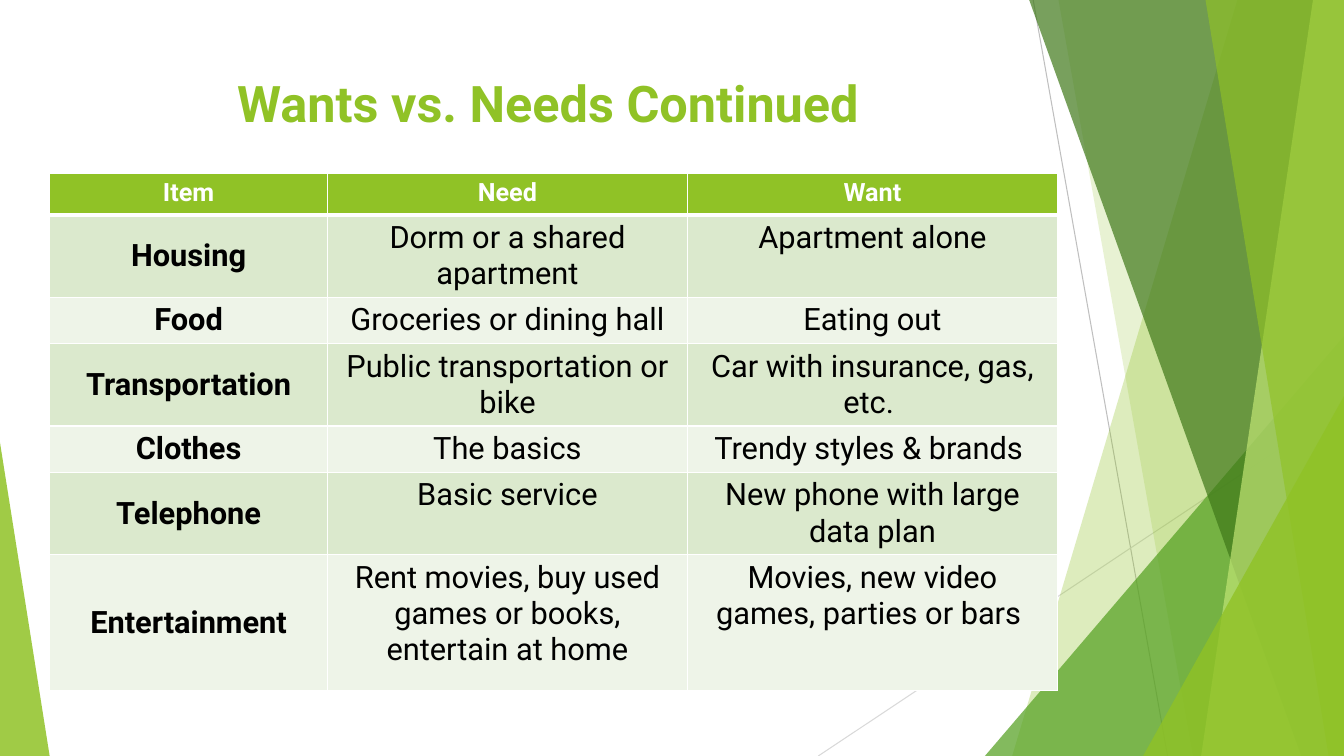
from lxml.etree import SubElement
from pptx import Presentation
from pptx.dml.color import RGBColor
from pptx.enum.shapes import MSO_CONNECTOR, MSO_SHAPE
from pptx.enum.text import MSO_ANCHOR, PP_ALIGN
from pptx.oxml.ns import qn
from pptx.util import Pt

WIDE, HIGH = 960, 540


def paint(fill, code):
    """Give a fill a solid colour."""
    fill.solid()
    fill.fore_color.rgb = RGBColor.from_string(code)


class Deck:
    font = "Roboto"
    green = "90C226"
    white = "FFFFFF"
    black = "000000"
    bands = ("DBE9CD", "EEF4E8")

    def __init__(self):
        self.prs = Presentation()
        self.prs.slide_width, self.prs.slide_height = Pt(WIDE), Pt(HIGH)
        self.slide = self.prs.slides.add_slide(self.prs.slide_layouts[5])
        self.shapes = self.slide.shapes
        paint(self.slide.background.fill, self.white)

    def label(self, frame, text, size, code, bold):
        para = frame.paragraphs[0]
        para.alignment = PP_ALIGN.CENTER
        run = para.add_run()
        run.text = text
        run.font.name, run.font.size, run.font.bold = self.font, Pt(size), bold
        paint(run.font.fill, code)

    def line(self, start, end, code):
        ends = [Pt(n) for n in start + end]
        line = self.shapes.add_connector(MSO_CONNECTOR.STRAIGHT, *ends)
        line.line.width = Pt(0.75)
        paint(line.line.fill, code)
        SubElement(line.element.spPr, qn("a:effectLst"))

    def glass(self, shape, code, alpha):
        shape.shadow.inherit = False
        shape.line.fill.background()
        paint(shape.fill, code)
        tint = shape.element.spPr.find(qn("a:solidFill"))[0]
        SubElement(tint, qn("a:alpha"), val=str(alpha * 1000))

    def pane(self, top, base, code, alpha):
        """Sheet from a slanted left edge to the right side of the slide."""
        form = self.shapes.build_freeform(Pt(top), Pt(-0.5))
        rest = [(WIDE, -0.5), (WIDE, HIGH), (base, HIGH)]
        form.add_line_segments([(Pt(x), Pt(y)) for x, y in rest])
        self.glass(form.convert_to_shape(), code, alpha)

    def wedge(self, left, top, wide, apex, code, alpha):
        """Triangle that stands on the bottom of the slide."""
        box = [Pt(n) for n in (left, top, wide, HIGH - top)]
        shape = self.shapes.add_shape(MSO_SHAPE.ISOSCELES_TRIANGLE, *box)
        shape.adjustments[0] = apex
        self.glass(shape, code, alpha)

    def title(self, text, left, top, wide, high):
        box = self.shapes.title
        box.left, box.top, box.width, box.height = map(Pt, (left, top, wide, high))
        box.text_frame.word_wrap = True
        box.text_frame.vertical_anchor = MSO_ANCHOR.TOP
        self.label(box.text_frame, text, 36, self.green, True)
        box.element.getparent().append(box.element)  # in front of the panes

    def edge(self, cell, side, width):
        props = cell._tc.get_or_add_tcPr()
        line = SubElement(props, qn("a:ln" + side), w=str(Pt(width)))
        fill = SubElement(line, qn("a:solidFill"))
        SubElement(fill, qn("a:srgbClr"), val=self.white)

    def cell(self, cell, text, row, col):
        head = row == 0
        for side in "LRTB":
            thick = (row, side) in ((0, "B"), (1, "T"))
            self.edge(cell, side, 3 if thick else 1)
        paint(cell.fill, self.green if head else self.bands[(row - 1) % 2])
        if col == 0 and not head:
            cell.vertical_anchor = MSO_ANCHOR.MIDDLE
        size, code = (18, self.white) if head else (22, self.black)
        self.label(cell.text_frame, text, size, code, head or col == 0)

    def table(self, data, left, top, cols, rows):
        box = [Pt(n) for n in (left, top, sum(cols), sum(rows))]
        grid = self.shapes.add_table(len(rows), len(cols), *box).table
        for col, wide in zip(grid.columns, cols):
            col.width = Pt(wide)
        for row, high in zip(grid.rows, rows):
            row.height = Pt(high)
        for r, texts in enumerate(data):
            for c, text in enumerate(texts):
                self.cell(grid.cell(r, c), text, r, c)


ITEMS = [
    ("Item", "Need", "Want"),
    ("Housing", "Dorm or a shared apartment", "Apartment alone"),
    ("Food", "Groceries or dining hall", "Eating out"),
    ("Transportation", "Public transportation or bike", "Car with insurance, gas, etc. "),
    ("Clothes", "The basics", "Trendy styles & brands "),
    ("Telephone", "Basic service", "New phone with large data plan"),
    ("Entertainment", "Rent movies, buy used games or books, entertain at home",
     "Movies, new video games, parties or bars "),
]


def main():
    deck = Deck()

    # Thin lines and glass panes, back to front
    deck.line((738, 0), (834, HIGH), "BFBFBF")
    deck.line((WIDE, 290), (584.5, HIGH), "D9D9D9")
    deck.pane(884, 723, deck.green, 30)
    deck.pane(756, 852, deck.green, 20)
    deck.wedge(703.5, 240, 256.5, 1, "54A021", 72)
    deck.pane(735, 929.5, "3F7819", 70)
    deck.pane(938, 858, "C0E474", 70)
    deck.pane(861, 949, deck.green, 65)
    deck.wedge(816.5, 283, 143.5, 1, deck.green, 80)
    deck.wedge(0, 316, 35.5, 0, deck.green, 85)

    # Title and table
    deck.title("Wants vs. Needs Continued", 53, 48, 677, 104)
    one, two = 30, 52
    deck.table(ITEMS, 35.5, 123.5, (198.5, 257, 264.5),
               (one, two, one, two, one, two, 97))

    deck.prs.save("out.pptx")


if __name__ == "__main__":
    main()
